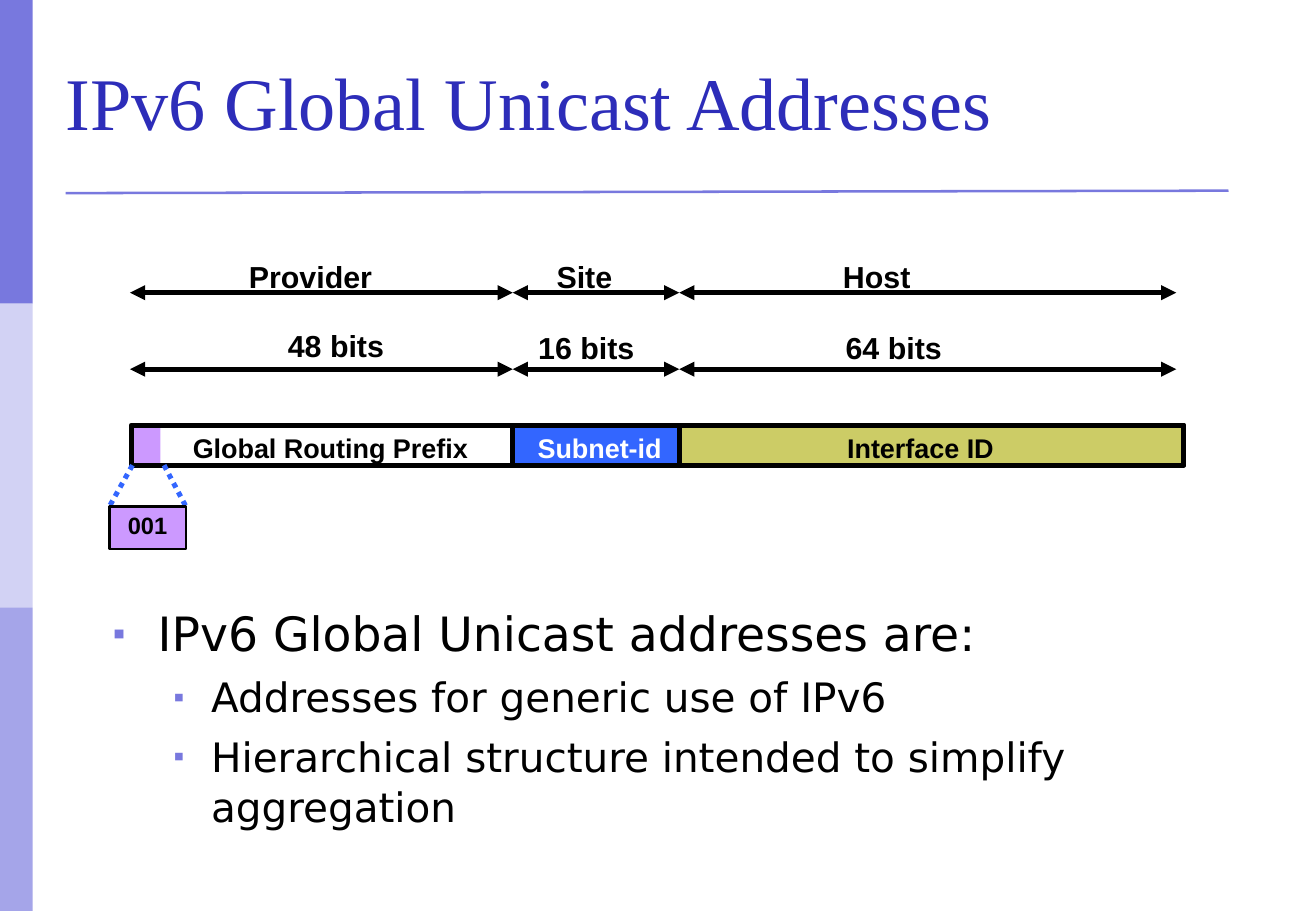
from itertools import pairwise, product

from pptx import Presentation
from pptx.dml.color import RGBColor
from pptx.enum.dml import MSO_LINE
from pptx.enum.shapes import MSO_CONNECTOR, MSO_SHAPE
from pptx.enum.text import MSO_ANCHOR, PP_ALIGN
from pptx.oxml.ns import qn
from pptx.util import Inches, Pt
from lxml.etree import SubElement

BLACK = RGBColor(0x00, 0x00, 0x00)
WHITE = RGBColor(0xFF, 0xFF, 0xFF)
NAVY = RGBColor(0x2D, 0x2D, 0xB9)
IRIS = RGBColor(0x78, 0x78, 0xDE)
PALE = RGBColor(0xD2, 0xD2, 0xF4)
MID = RGBColor(0xA5, 0xA5, 0xE9)
LILAC = RGBColor(0xCC, 0x99, 0xFF)
OLIVE = RGBColor(0xCC, 0xCC, 0x66)
BLUE = RGBColor(0x33, 0x66, 0xFF)


class Page:
    """Draws on one slide over a grid of ten columns and rows to the inch."""

    label, prose, serif = "Arial", "DejaVu Sans", "Times New Roman"

    def __init__(self, slide):
        self.slide = slide
        self.shapes = slide.shapes

    def grid(self, *cells):
        return [Inches(cell / 10) for cell in cells]

    def inset(self, frame, *sides):
        (frame.margin_left, frame.margin_top,
         frame.margin_right, frame.margin_bottom) = self.grid(*sides)

    def style(self, para, size, color, face, bold, space):
        font = para.font
        font.size, font.name, font.bold = Pt(size), face, bold
        font.color.rgb = color
        para.line_spacing = space

    def caption(self, frame, text, size, color=BLACK, top=0.7):
        self.inset(frame, 0, top, 0, 0.5)
        frame.word_wrap = True
        frame.vertical_anchor = MSO_ANCHOR.TOP
        para = frame.paragraphs[0]
        para.text = text
        para.alignment = PP_ALIGN.CENTER
        self.style(para, size, color, self.label, True, 0.93)

    def box(self, area, fill=None, width=0):
        shape = self.shapes.add_shape(MSO_SHAPE.RECTANGLE, *self.grid(*area))
        shape.shadow.inherit = False
        if fill is None:
            shape.fill.background()
        else:
            shape.fill.solid()
            shape.fill.fore_color.rgb = fill
        if width:
            shape.line.color.rgb = BLACK
            shape.line.width = Pt(width)
        else:
            shape.line.fill.background()
        return shape

    def text(self, area, text, size, color=BLACK):
        frame = self.shapes.add_textbox(*self.grid(*area)).text_frame
        self.caption(frame, text, size, color)

    def line(self, ends, color, width, dash=None, heads=()):
        line = self.shapes.add_connector(
            MSO_CONNECTOR.STRAIGHT, *self.grid(*ends))
        line.line.color.rgb = color
        line.line.width = Pt(width)
        if dash:
            line.line.dash_style = dash
        props = line.element.spPr
        for head in heads:
            SubElement(props.find(qn("a:ln")), qn(head), type="triangle")
        SubElement(props, qn("a:effectLst"))

    def title(self, area, text):
        frame = self.shapes.add_textbox(*self.grid(*area)).text_frame
        self.inset(frame, 0, 0, 0, 0)
        frame.word_wrap = True
        frame.vertical_anchor = MSO_ANCHOR.MIDDLE
        para = frame.paragraphs[0]
        para.text = text
        self.style(para, 44, NAVY, self.serif, False, 0.78)

    def bullets(self, area, items):
        frame = self.shapes.add_textbox(*self.grid(*area)).text_frame
        self.inset(frame, 1, 0.5, 1, 0.5)
        frame.word_wrap = True
        looks = [(28, 7, 3.7, 3.7), (24, 6, 8.1, 3.1)]
        for order, (level, text) in enumerate(items):
            para = frame.add_paragraph() if order else frame.paragraphs[0]
            para.text, para.level = text, level
            size, gap, left, hang = looks[level]
            props = para._p.get_or_add_pPr()
            left, hang = self.grid(left, hang)
            props.set("marL", str(left))
            props.set("indent", str(-hang))
            tint = SubElement(props, qn("a:buClr"))
            SubElement(tint, qn("a:srgbClr"), val=str(IRIS))
            SubElement(props, qn("a:buSzPct"), val="75000")
            SubElement(props, qn("a:buFont"), typeface=self.label)
            SubElement(props, qn("a:buChar"), char="▪")
            para.space_before = Pt(gap)
            self.style(para, size, BLACK, self.prose, False, 1.02)


def main():
    deck = Presentation()
    deck.slide_width, deck.slide_height = Inches(10.83), Inches(7.5)
    page = Page(deck.slides.add_slide(deck.slide_layouts[6]))

    for row, tint in enumerate((IRIS, PALE, MID)):
        page.box((0, 25 * row, 2.7, 25), tint)
    page.line((5.4, 15.9, 101.1, 15.7), IRIS, 1.5)
    page.title((5.4, 2.7, 97.4, 12.7), "IPv6 Global Unicast Addresses")

    page.box((10.8, 35.1, 2.4, 3.2), LILAC)
    for left, wide, fill in ((54.1, 43.3, OLIVE), (42.2, 13.7, BLUE),
                             (10.8, 86.6, None)):
        page.box((left, 35, wide, 3.3), fill, 3)
    for left, wide, name, tint in (
            (13.2, 28, "Global Routing Prefix", BLACK),
            (41.4, 15.9, "Subnet-id", WHITE),
            (55, 41.5, "Interface ID", BLACK)):
        page.text((left, 35.1, wide, 3.9), name, 16, tint)

    for top, foot in ((10.9, 9), (13.5, 15.3)):
        page.line((top, 38.3, foot, 41.7), BLUE, 3, MSO_LINE.ROUND_DOT)
    flag = page.box((9, 41.7, 6.3, 3.5), LILAC, 1.5)
    page.caption(flag.text_frame, "001", 14, top=0.6)

    edges = (10.7, 42.2, 55.9, 96.8)
    for row, (start, end) in product((24.1, 30.4), pairwise(edges)):
        page.line((start, row, end, row), BLACK, 3,
                  heads=("a:headEnd", "a:tailEnd"))
    for left, wide, part in ((19.5, 12.1, "Provider"), (44.8, 6.6, "Site"),
                             (68.4, 7.5, "Host")):
        page.text((left, 20.8, wide, 4.3), part, 18)
    for left, top, bits in ((20, 26.5, 48), (40.6, 26.7, 16),
                            (65.9, 26.7, 64)):
        page.text((left, top, 15.3, 4.3), f"{bits} bits", 18)

    page.bullets((8.3, 49.2, 94, 20), (
        (0, "IPv6 Global Unicast addresses are:"),
        (1, "Addresses for generic use of IPv6"),
        (1, "Hierarchical structure intended to simplify aggregation")))
    deck.save("out.pptx")


if __name__ == "__main__":
    main()
